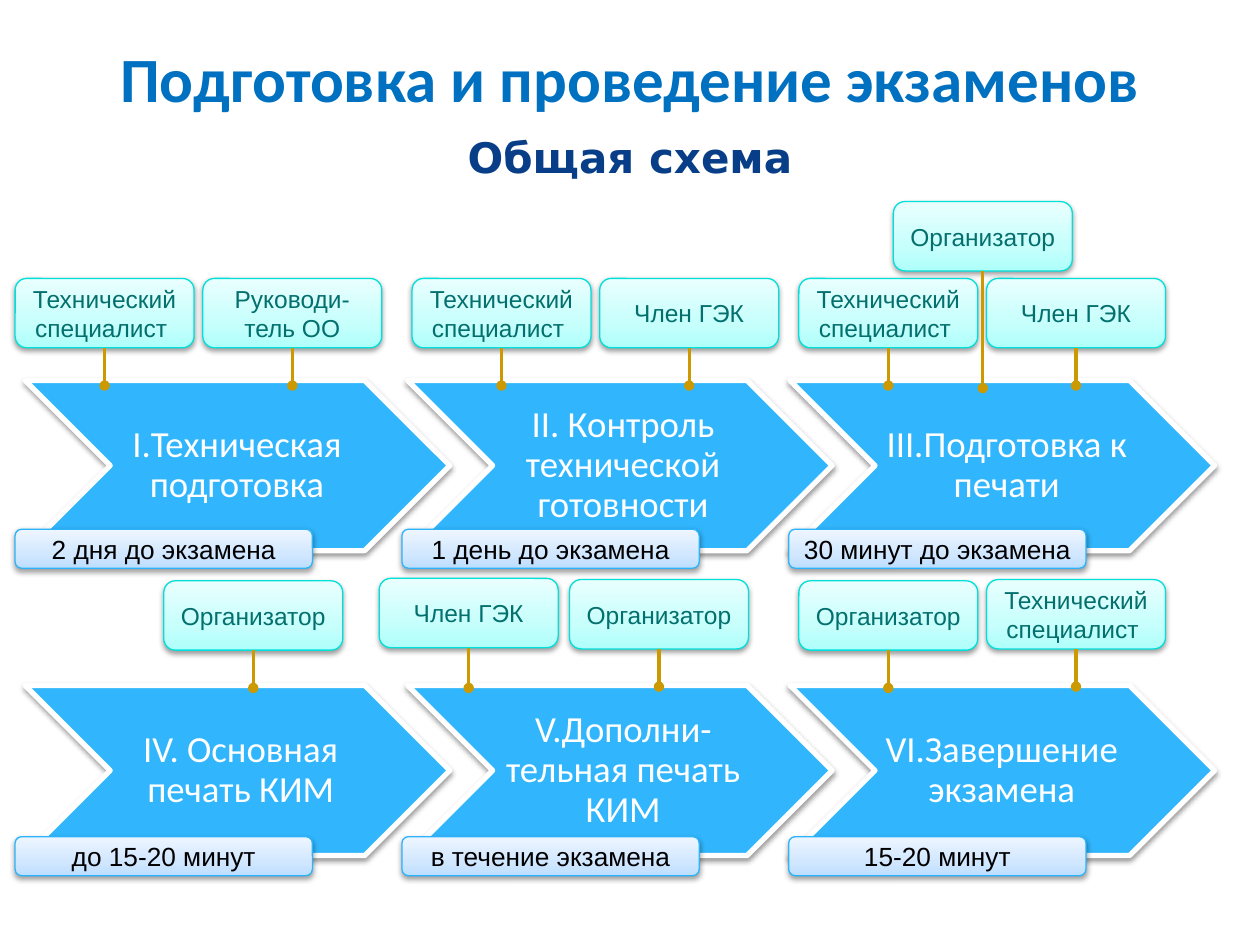
from copy import deepcopy
from typing import NamedTuple

from lxml.etree import SubElement
from pptx import Presentation
from pptx.dml.color import RGBColor
from pptx.enum.shapes import MSO_CONNECTOR, MSO_SHAPE
from pptx.enum.text import MSO_ANCHOR, PP_ALIGN
from pptx.oxml.ns import qn
from pptx.util import Inches, Pt


class Stage(NamedTuple):
    name: str
    time: str
    left: float = 0.09
    right: float = 0.03


class Role(NamedTuple):
    name: str
    x: float
    y: float
    drop: float = 0.85


class Look(NamedTuple):
    size: float
    face: str
    color: str
    bold: bool = False
    space: float = 1.0
    pads: tuple = (0.1, 0.05, 0.1, 0.05)


class Tint(NamedTuple):
    stops: tuple
    edge: str


TITLE = Look(36, "Calibri", "0070C0", True)
SUB = Look(24, "DejaVu Sans", "073E87", True)
STEP = Look(21, "Calibri", "FFFFFF", space=0.9)
TIME = Look(15, "Arial", "000000", pads=(0, 0.05, 0, 0.05))
ROLE = Look(14, "Arial", "03706E")
BLUE = Tint(("BDDEFF", "D1E7FF", "EEF6FF"), "2BB4FC")
AQUA = Tint(("AEFFFB", "C6FFFC", "E9FFFE"), "00E0DB")

STAGES = [
    Stage("I.Техническая подготовка", "2 дня до экзамена", 0, 0),
    Stage("II. Контроль технической готовности", "1 день до экзамена"),
    Stage("III.Подготовка к печати", "30 минут до экзамена", 0.08, 0),
    Stage("IV. Основная печать КИМ", "до 15-20 минут"),
    Stage("V.Дополни-тельная печать КИМ", "в течение экзамена"),
    Stage("VI.Завершение экзамена", "15-20 минут", 0, 0),
]
TECH, ORG, GEK = "Технический специалист ", "Организатор", "Член ГЭК"
ROLES = [
    Role(TECH, 0.12, 2.21),
    Role("Руководи-тель ОО", 1.61, 2.21),
    Role(TECH, 3.27, 2.21),
    Role(GEK, 4.76, 2.21),
    Role(TECH, 6.34, 2.21),
    Role(GEK, 7.83, 2.21),
    Role(ORG, 7.09, 1.6, 1.48),
    Role(ORG, 1.3, 4.61),
    Role(GEK, 3.01, 4.59, 0.87),
    Role(ORG, 4.52, 4.6),
    Role(ORG, 6.34, 4.61),
    Role(TECH, 7.83, 4.6),
]


def rgb(code: str) -> RGBColor:
    return RGBColor.from_string(code)


def put(item, vals: dict) -> None:
    for key, val in vals.items():
        setattr(item, key, val)


def write(shape, text: str, look: Look) -> None:
    frame = shape.text_frame
    sides = ("left", "top", "right", "bottom")
    put(frame, {f"margin_{s}": Inches(p) for s, p in zip(sides, look.pads)})
    put(frame, {"word_wrap": True, "vertical_anchor": MSO_ANCHOR.MIDDLE})
    para = frame.paragraphs[0]
    put(para, {"alignment": PP_ALIGN.CENTER, "line_spacing": look.space})
    run = para.add_run()
    run.text = text
    put(run.font, {"size": Pt(look.size), "name": look.face, "bold": look.bold})
    run.font.color.rgb = rgb(look.color)


def label(slide, text: str, box: tuple, look: Look) -> None:
    write(slide.shapes.add_textbox(*map(Inches, box)), text, look)


def solid(slide, kind, box: tuple, edge: str, width: float):
    shape = slide.shapes.add_shape(kind, *map(Inches, box))
    shape.line.color.rgb = rgb(edge)
    shape.line.width = Pt(width)
    shape.shadow.inherit = False
    glow = shape._element.spPr.find(qn("a:effectLst"))
    cast = SubElement(glow, qn("a:outerShdw"), blurRad="40000", dist="20000",
                      dir="5400000", rotWithShape="0")
    tone = SubElement(cast, qn("a:srgbClr"), val="000000")
    SubElement(tone, qn("a:alpha"), val="38000")
    return shape


def panel(slide, text: str, box: tuple, tint: Tint, look: Look):
    shape = solid(slide, MSO_SHAPE.ROUNDED_RECTANGLE, box, tint.edge, 0.75)
    fill = shape.fill
    fill.gradient()
    fill.gradient_angle = 90
    stops = shape._element.spPr.find(".//" + qn("a:gsLst"))
    stops.append(deepcopy(stops[-1]))
    for stop, place, code in zip(fill.gradient_stops, (0, 0.35, 1), tint.stops):
        stop.position = place
        stop.color.rgb = rgb(code)
    write(shape, text, look)
    return shape


def draw_stage(slide, stage: Stage, row: int, col: int) -> None:
    x, y = 0.2 + 3.035 * col, 3.02 + 2.42 * row
    arrow = solid(slide, MSO_SHAPE.CHEVRON, (x, y, 3.37, 1.35), "FFFFFF", 3)
    arrow.fill.solid()
    arrow.fill.fore_color.rgb = rgb("31B6FD")
    look = STEP._replace(pads=(stage.left, 0.03, stage.right, 0.03))
    label(slide, stage.name, (x + 0.67, y, 2.02, 1.35), look)


def draw_time(slide, stage: Stage, row: int, col: int) -> None:
    box = (0.12 + 3.07 * col, 4.2 + 2.44 * row, 2.36, 0.31)
    panel(slide, stage.time, box, BLUE, TIME)


def draw_role(slide, role: Role) -> None:
    box = panel(slide, role.name, (role.x, role.y, 1.42, 0.55), AQUA, ROLE)
    mid = Inches(role.x + 0.71)
    link = slide.shapes.add_connector(
        MSO_CONNECTOR.STRAIGHT, mid, Inches(role.y + 0.55),
        mid, Inches(role.y + role.drop))
    link.begin_connect(box, 2)
    link.line.color.rgb = rgb("CC9900")
    link.line.width = Pt(1.75)
    props = link._element.spPr
    SubElement(props.find(qn("a:ln")), qn("a:tailEnd"), type="oval")
    SubElement(props, qn("a:effectLst"))


def main() -> None:
    deck = Presentation()
    put(deck, {"slide_width": Inches(10), "slide_height": Inches(7.5)})
    slide = deck.slides.add_slide(deck.slide_layouts[6])
    label(slide, "Подготовка и проведение экзаменов", (0.5, 0.18, 9, 0.87), TITLE)
    label(slide, "Общая схема", (0, 1.05, 10, 0.39), SUB)
    for draw in (draw_stage, draw_time):
        for i, stage in enumerate(STAGES):
            draw(slide, stage, *divmod(i, 3))
    for role in ROLES:
        draw_role(slide, role)
    deck.save("out.pptx")


if __name__ == "__main__":
    main()
